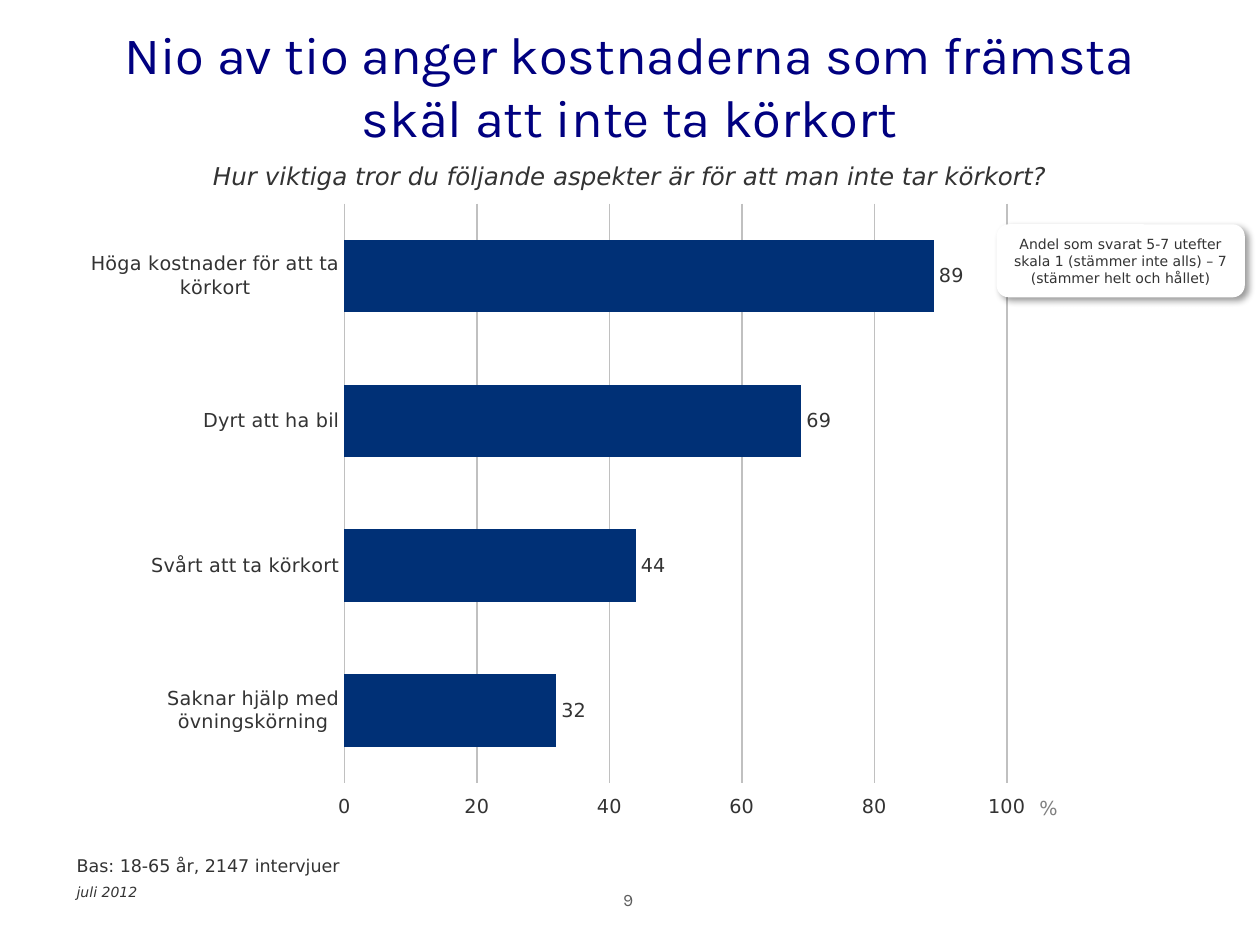
from dataclasses import dataclass

from lxml import etree
from pptx import Presentation
from pptx.chart.data import CategoryChartData
from pptx.dml.color import RGBColor
from pptx.enum.chart import (
    XL_CHART_TYPE,
    XL_LABEL_POSITION,
    XL_TICK_LABEL_POSITION,
    XL_TICK_MARK,
)
from pptx.enum.shapes import MSO_SHAPE
from pptx.enum.text import MSO_ANCHOR, PP_ALIGN
from pptx.oxml import parse_xml
from pptx.oxml.ns import nsdecls, qn
from pptx.util import Inches, Pt

LEFT, CENTER = PP_ALIGN.LEFT, PP_ALIGN.CENTER
TOP, MIDDLE = MSO_ANCHOR.TOP, MSO_ANCHOR.MIDDLE
BAR = XL_CHART_TYPE.BAR_CLUSTERED
OUTSIDE_END = XL_LABEL_POSITION.OUTSIDE_END
HIGH_SIDE = XL_TICK_LABEL_POSITION.HIGH
NO_TICK = XL_TICK_MARK.NONE
CROSS_TICK = XL_TICK_MARK.CROSS
ROUNDED = MSO_SHAPE.ROUNDED_RECTANGLE

WHITE = RGBColor(0xFF, 0xFF, 0xFF)
NAVY = RGBColor(0x00, 0x00, 0x80)
BAR_BLUE = RGBColor(0x00, 0x30, 0x76)
INK = RGBColor(0x33, 0x33, 0x33)
PAGE_GREY = RGBColor(0x5F, 0x5F, 0x5F)
UNIT_GREY = RGBColor(0x80, 0x80, 0x80)
GRID_GREY = RGBColor(0xC0, 0xC0, 0xC0)

BODY_FONT = "DejaVu Sans"
TITLE_FONT = "Karla"

REASONS = {
    "Höga kostnader för att ta körkort": 89,
    "Dyrt att ha bil": 69,
    "Svårt att ta körkort": 44,
    "Saknar hjälp med övningskörning": 32,
}


@dataclass
class Label:
    text: str
    left: float
    top: float
    width: float
    height: float
    size: float
    color: RGBColor = INK
    font: str = BODY_FONT
    align: PP_ALIGN = LEFT
    anchor: MSO_ANCHOR = TOP
    italic: bool = False


LABELS = [
    Label("juli 2012", 0.51, 6.96, 3.17, 0.3, 8, italic=True),
    Label("Nio av tio anger kostnaderna som främsta skäl att inte ta körkort",
          0.5, 0.05, 9, 1.25, 30, NAVY, TITLE_FONT, CENTER, MIDDLE),
    Label("9", 3.82, 7.01, 2.33, 0.4, 10, PAGE_GREY, TITLE_FONT, CENTER),
    Label("%", 8.15, 6.27, 0.39, 0.29, 11, UNIT_GREY),
    Label("Bas: 18-65 år, 2147 intervjuer", 0.51, 6.74, 4.49, 0.27, 10),
    Label("Hur viktiga tror du följande aspekter är för att man inte tar körkort?",
          0.51, 1.23, 8.98, 0.34, 14, align=CENTER, italic=True),
]
SCALE_NOTE = Label(
    "Andel som svarat 5-7 utefter skala 1 (stämmer inte alls) – 7 (stämmer helt och hållet)",
    7.91, 1.78, 1.97, 0.58, 8, align=CENTER, anchor=MIDDLE)


def box(label: Label) -> tuple:
    return tuple(Inches(v) for v in (label.left, label.top, label.width, label.height))


def style_font(font, size: float, color: RGBColor, name: str = BODY_FONT) -> None:
    font.size = Pt(size)
    font.name = name
    font.color.rgb = color


def write(shape, label: Label) -> None:
    frame = shape.text_frame
    frame.word_wrap = True
    frame.vertical_anchor = label.anchor
    frame.text = label.text
    paragraph = frame.paragraphs[0]
    paragraph.alignment = label.align
    font = paragraph.runs[0].font
    style_font(font, label.size, label.color, label.font)
    font.italic = label.italic


def add_label(slide, label: Label) -> None:
    write(slide.shapes.add_textbox(*box(label)), label)


def add_scale_note(slide, label: Label) -> None:
    note = slide.shapes.add_shape(ROUNDED, *box(label))
    note.fill.solid()
    note.fill.fore_color.rgb = WHITE
    note.line.fill.background()
    note.shadow.inherit = False
    effects = note.fill._xPr.find(qn("a:effectLst"))
    effects.append(parse_xml(
        f'<a:outerShdw {nsdecls("a")} blurRad="{Pt(4)}" dist="{Pt(3)}" dir="2700000" '
        'algn="tl" rotWithShape="0"><a:srgbClr val="000000"><a:alpha val="40000"/>'
        '</a:srgbClr></a:outerShdw>'))
    write(note, label)
    frame = note.text_frame
    frame.margin_left = frame.margin_right = Inches(0.1)
    frame.margin_top = frame.margin_bottom = Inches(0.06)


def place_plot(chart, x: float, y: float, w: float, h: float) -> None:
    plot_area = chart._chartSpace.chart.plotArea
    for old in plot_area.findall(qn("c:layout")):
        plot_area.remove(old)
    layout = etree.Element(qn("c:layout"))
    manual = etree.SubElement(layout, qn("c:manualLayout"))
    settings = {"layoutTarget": "inner", "xMode": "edge", "yMode": "edge",
                "x": x, "y": y, "w": w, "h": h}
    for tag, value in settings.items():
        etree.SubElement(manual, qn(f"c:{tag}")).set("val", str(value))
    plot_area.insert(0, layout)


def add_reasons_chart(slide) -> None:
    data = CategoryChartData(number_format="0")
    data.categories = list(REASONS)
    data.add_series("Series 1", list(REASONS.values()))
    chart = slide.shapes.add_chart(
        BAR, Inches(0.72), Inches(1.15), Inches(8.25), Inches(5.56), data).chart
    chart.has_legend = False
    chart.has_title = False
    style_font(chart.font, 11, INK)
    place_plot(chart, 0.242, 0.084, 0.639, 0.827)

    reasons = chart.category_axis
    reasons.reverse_order = True
    reasons.major_tick_mark = NO_TICK

    percent = chart.value_axis
    percent.minimum_scale, percent.maximum_scale = 0, 100
    percent.major_unit = 20
    percent.major_tick_mark = CROSS_TICK
    percent.tick_label_position = HIGH_SIDE
    percent.has_major_gridlines = True
    grid = percent.major_gridlines.format.line
    grid.color.rgb = GRID_GREY
    grid.width = Pt(0.89)

    for axis in (reasons, percent):
        axis.format.line.fill.background()
        style_font(axis.tick_labels.font, 11, INK)

    plot = chart.plots[0]
    plot.gap_width = 100
    plot.vary_by_categories = False
    bars = plot.series[0]
    bars.format.fill.solid()
    bars.format.fill.fore_color.rgb = BAR_BLUE
    values = bars.data_labels
    values.show_value = True
    values.position = OUTSIDE_END
    values.number_format = "0"
    values.number_format_is_linked = False
    style_font(values.font, 11, INK)


def main() -> None:
    deck = Presentation()
    deck.slide_width, deck.slide_height = Inches(10), Inches(7.5)
    slide = deck.slides.add_slide(deck.slide_layouts[6])
    add_reasons_chart(slide)
    for label in LABELS:
        add_label(slide, label)
    add_scale_note(slide, SCALE_NOTE)
    deck.save("out.pptx")


if __name__ == "__main__":
    main()
